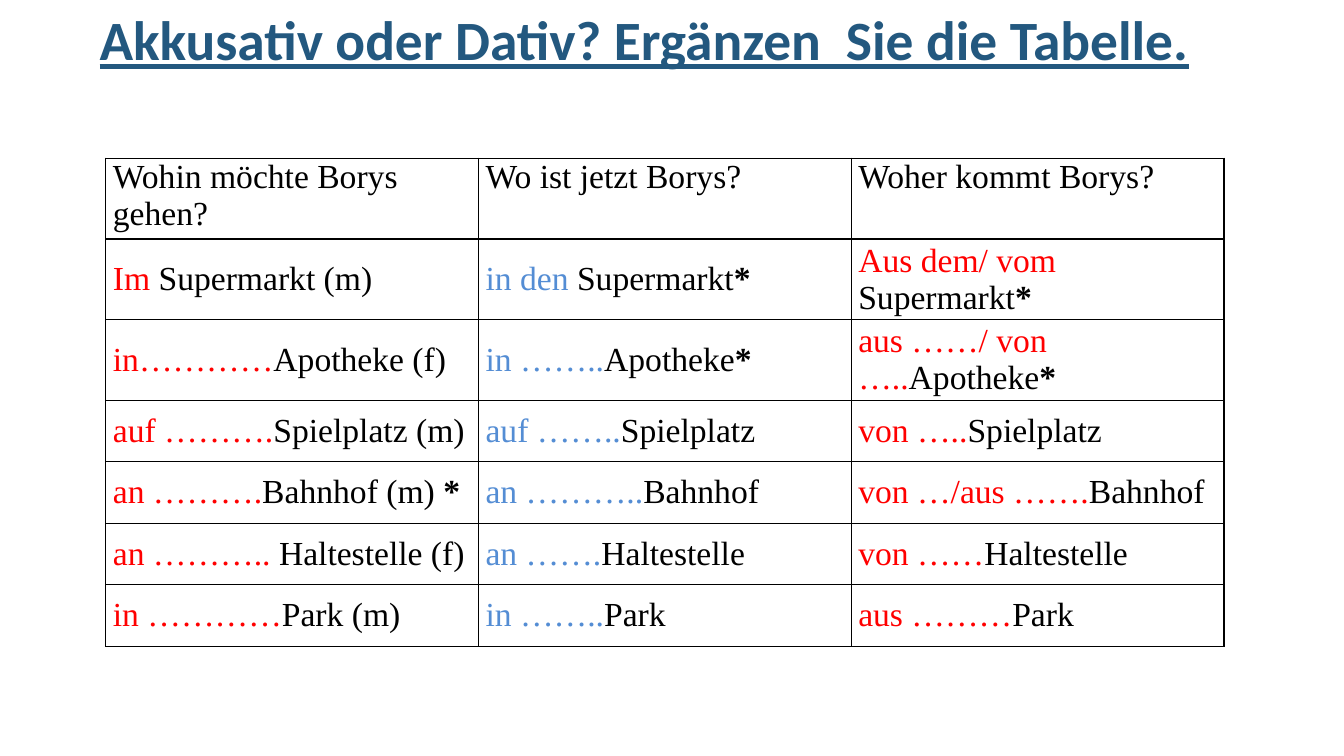
from typing import Any, NamedTuple

from lxml.etree import SubElement
from pptx import Presentation
from pptx.dml.color import RGBColor
from pptx.enum.text import MSO_ANCHOR
from pptx.oxml.ns import qn
from pptx.util import Inches, Pt

BLACK = RGBColor(0x00, 0x00, 0x00)
RED = RGBColor(0xFF, 0x00, 0x00)
BLUE = RGBColor(0x54, 0x8D, 0xD4)
NAVY = RGBColor(0x23, 0x58, 0x7F)

TITLE = {"name": "Calibri", "size": Pt(39.6), "bold": True, "underline": True}
BODY = {"name": "Times New Roman", "size": Pt(24), "bold": False}
STAR = BODY | {"bold": True}
INSET = {
    "margin_left": Inches(0.07),
    "margin_right": Inches(0.07),
    "margin_top": 0,
    "margin_bottom": 0,
}


class Entry(NamedTuple):
    lead: str
    noun: str
    star: str = ""


HEADS = ["Wohin möchte Borys gehen?", "Wo ist jetzt Borys?", "Woher kommt Borys?"]
HUES = [RED, BLUE, RED]
PLACES = [
    [Entry("Im ", "Supermarkt (m)"),
     Entry("in den ", "Supermarkt", "*"),
     Entry("Aus dem/ vom ", "Supermarkt", "*")],
    [Entry("in…………", "Apotheke (f)"),
     Entry("in ……..", "Apotheke", "*"),
     Entry("aus ……/ von …..", "Apotheke", "*")],
    [Entry("auf ……….", "Spielplatz (m)"),
     Entry("auf ……..", "Spielplatz"),
     Entry("von …..", "Spielplatz")],
    [Entry("an ……….", "Bahnhof (m) ", "*"),
     Entry("an ………..", "Bahnhof"),
     Entry("von …/aus …….", "Bahnhof")],
    [Entry("an ……….. ", "Haltestelle (f)"),
     Entry("an …….", "Haltestelle"),
     Entry("von ……", "Haltestelle")],
    [Entry("in …………", "Park (m)"),
     Entry("in ……..", "Park"),
     Entry("aus ………", "Park")],
]
# The first three rows hold two lines of text.
TALL, LOW = 0.74, 0.61
HEIGHTS = [TALL] * 3 + [LOW] * 4


def apply(item: Any, form: dict[str, Any]) -> None:
    for key, value in form.items():
        setattr(item, key, value)


def write(para: Any, text: str, form: dict[str, Any], hue: RGBColor) -> None:
    run = para.add_run()
    run.text = text
    apply(run.font, form)
    run.font.color.rgb = hue


def frame(cell: Any) -> None:
    """Give the cell thin black borders, no fill and its insets."""
    props = cell._tc.get_or_add_tcPr()
    for side in ("a:lnL", "a:lnR", "a:lnT", "a:lnB"):
        line = SubElement(props, qn(side), w=str(Pt(1)))
        fill = SubElement(line, qn("a:solidFill"))
        SubElement(fill, qn("a:srgbClr"), val=str(BLACK))
    cell.fill.background()
    apply(cell, INSET)


def add_title(slide: Any) -> None:
    box = slide.shapes.add_textbox(
        Inches(0.89), Inches(0.13), Inches(11.5), Inches(1.12))
    text = box.text_frame
    apply(text, {"word_wrap": True, "margin_top": 0,
                 "vertical_anchor": MSO_ANCHOR.TOP})
    para = text.paragraphs[0]
    para.line_spacing = 0.9
    write(para, "Akkusativ oder Dativ? Ergänzen  Sie die Tabelle.", TITLE, NAVY)


def add_grid(slide: Any) -> None:
    table = slide.shapes.add_table(
        len(HEIGHTS), len(HEADS), Inches(1.05), Inches(1.57),
        Inches(11.09), Inches(sum(HEIGHTS))).table
    apply(table, {"first_row": False, "horz_banding": False})
    for row, height in zip(table.rows, HEIGHTS):
        row.height = Inches(height)
    for col, head in enumerate(HEADS):
        cell = table.cell(0, col)
        frame(cell)
        write(cell.text_frame.paragraphs[0], head, BODY, BLACK)
    for row, place in enumerate(PLACES, 1):
        for col, (entry, hue) in enumerate(zip(place, HUES)):
            cell = table.cell(row, col)
            frame(cell)
            cell.vertical_anchor = MSO_ANCHOR.MIDDLE
            para = cell.text_frame.paragraphs[0]
            write(para, entry.lead, BODY, hue)
            write(para, entry.noun, BODY, BLACK)
            if entry.star:
                write(para, entry.star, STAR, BLACK)


def main() -> None:
    deck = Presentation()
    deck.slide_width, deck.slide_height = Inches(13.33), Inches(7.5)
    slide = deck.slides.add_slide(deck.slide_layouts[6])
    add_title(slide)
    add_grid(slide)
    deck.save("out.pptx")


if __name__ == "__main__":
    main()
